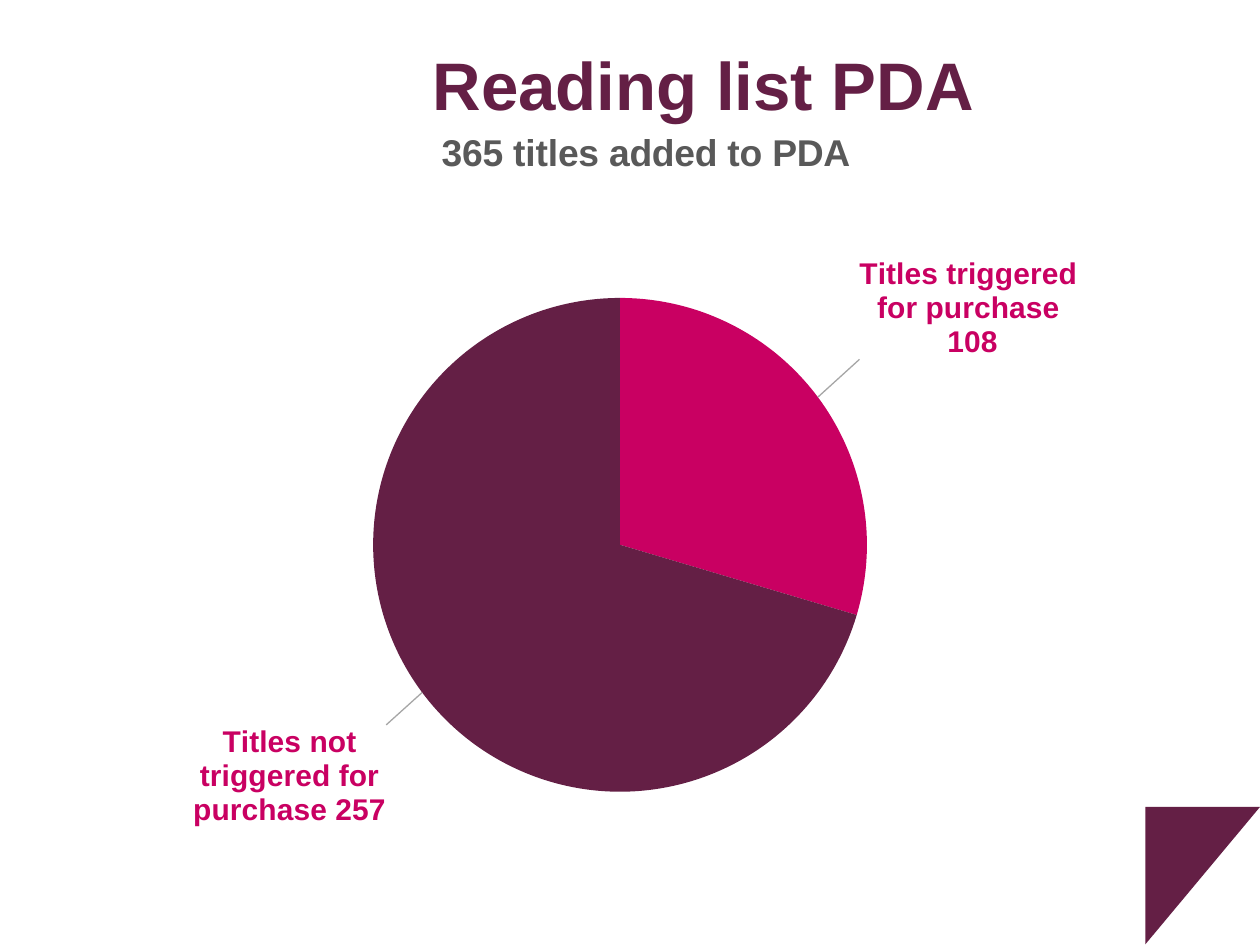
from lxml.etree import SubElement
from pptx import Presentation
from pptx.chart.data import CategoryChartData
from pptx.dml.color import RGBColor
from pptx.enum.chart import XL_CHART_TYPE as ChartType, XL_LABEL_POSITION as LabelPosition
from pptx.enum.shapes import MSO_SHAPE as Shape
from pptx.enum.text import MSO_ANCHOR as Anchor, PP_ALIGN as Align
from pptx.oxml import parse_xml
from pptx.oxml.ns import nsdecls, qn
from pptx.util import Pt

PLUM = RGBColor(0x64, 0x1F, 0x45)
PINK = RGBColor(0xC9, 0x00, 0x62)
GREY = RGBColor(0x59, 0x59, 0x59)
LEADER = RGBColor(0xA6, 0xA6, 0xA6)
FONT = "Arial"

# Content
TITLE = "Reading list PDA"
CHART_TITLE = "365 titles added to PDA"
# category, value, colour, label text (None: category and value), label offset
SLICES = [
    ("Titles triggered for purchase\n", 108, PINK, None, (20.4, -19.1)),
    ("Titles not triggered for purchase\n", 257, PLUM,
     "Titles not triggered for purchase 257", (-17.2, 16)),
]

# Places in points: left, top, width, height
TITLE_BOX = (240, 17.3, 330.5, 60.5)
CHART_BOX = (31, 64, 639.4, 427)
CORNER_BOX = (648, 467.6, 78.5, 65.5)
PIE_CENTRE, PIE_RADIUS = (354.3, 311.4), 141.1
HEADING_CORNER = (248.6, 70)
LABEL_SIZE = (115, 78)
LABEL_EXTENSION = "{CE6537A1-D6FC-4f65-9D91-7224C49458BB}"
C15 = "http://schemas.microsoft.com/office/drawing/2012/chart"


def format_font(font, size, colour):
    for name, value in {"name": FONT, "size": Pt(size), "bold": True}.items():
        setattr(font, name, value)
    font.color.rgb = colour


def fractions(x, y):
    """Lengths in points as fractions of the chart area."""
    return round(x / CHART_BOX[2], 4), round(y / CHART_BOX[3], 4)


def manual_layout(**values):
    layout = parse_xml(f"<c:layout {nsdecls('c')}><c:manualLayout/></c:layout>")
    for name, value in values.items():
        SubElement(layout[0], qn(f"c:{name}")).set("val", str(value))
    return layout


def label_size_extension():
    width, height = fractions(*LABEL_SIZE)
    return parse_xml(
        f"<c:extLst {nsdecls('c')}><c:ext uri='{LABEL_EXTENSION}' xmlns:c15='{C15}'>"
        f"<c15:layout><c:manualLayout><c:w val='{width}'/><c:h val='{height}'/>"
        "</c:manualLayout></c15:layout></c:ext></c:extLst>")


presentation = Presentation()
presentation.slide_width, presentation.slide_height = Pt(720), Pt(540)
slide = presentation.slides.add_slide(presentation.slide_layouts[5])

# Corner triangle
corner = slide.shapes.add_shape(Shape.RIGHT_TRIANGLE, *map(Pt, CORNER_BOX))
corner.rotation = 90
corner.shadow.inherit = False
corner.fill.solid()
corner.fill.fore_color.rgb = PLUM
corner.line.fill.background()

# Title
title = slide.shapes.title
for name, value in zip(("left", "top", "width", "height"), TITLE_BOX):
    setattr(title, name, Pt(value))
title.text_frame.text = TITLE
title.text_frame.vertical_anchor = Anchor.MIDDLE
title.text_frame.paragraphs[0].alignment = Align.LEFT
format_font(title.text_frame.paragraphs[0].runs[0].font, 38.4, PLUM)

# Pie chart
data = CategoryChartData()
data.categories = [item[0] for item in SLICES]
data.add_series(CHART_TITLE, [item[1] for item in SLICES])
chart = slide.shapes.add_chart(ChartType.PIE, *map(Pt, CHART_BOX), data).chart
chart.has_legend = False
chart.font.name, chart.font.size = FONT, Pt(10)
chart_left, chart_top = CHART_BOX[:2]

# Chart title
chart.has_title = True
heading = chart.chart_title
heading.include_in_layout = False
heading.text_frame.text = CHART_TITLE
format_font(heading.text_frame.paragraphs[0].runs[0].font, 21.3, GREY)
heading_xml = heading._element
for old in heading_xml.findall(qn("c:layout")):
    heading_xml.remove(old)
x, y = fractions(HEADING_CORNER[0] - chart_left, HEADING_CORNER[1] - chart_top)
heading_xml.find(qn("c:tx")).addnext(
    manual_layout(xMode="edge", yMode="edge", x=x, y=y))

# Pie position inside the chart
plot_area = chart._chartSpace.chart.plotArea
for old in plot_area.findall(qn("c:layout")):
    plot_area.remove(old)
x, y = fractions(PIE_CENTRE[0] - PIE_RADIUS - chart_left,
                 PIE_CENTRE[1] - PIE_RADIUS - chart_top)
w, h = fractions(2 * PIE_RADIUS, 2 * PIE_RADIUS)
plot_area.insert(0, manual_layout(
    layoutTarget="inner", xMode="edge", yMode="edge", x=x, y=y, w=w, h=h))

# Slices and their labels
series = chart.plots[0].series[0]
labels = series.data_labels
labels.show_value = labels.show_category_name = labels.show_percentage = True
labels.position = LabelPosition.OUTSIDE_END
format_font(labels.font, 17.1, PINK)
for index, (_, _, colour, text, offset) in enumerate(SLICES):
    point = series.points[index]
    point.format.fill.solid()
    point.format.fill.fore_color.rgb = colour
    point.format.line.fill.background()
    label = point.data_label
    if text:
        label.text_frame.text = text
        format_font(label.text_frame.paragraphs[0].runs[0].font, 17.1, PINK)
    else:
        format_font(label.font, 17.1, PINK)
    label.position = LabelPosition.OUTSIDE_END
    label_xml = series._element.xpath(f"c:dLbls/c:dLbl[c:idx/@val='{index}']")[0]
    x, y = fractions(*offset)
    label_xml.find(qn("c:idx")).addnext(manual_layout(x=x, y=y))
    label_xml.find(qn("c:showCatName")).set("val", "1")
    SubElement(label_xml, qn("c:separator")).text = " "
    label_xml.append(label_size_extension())

# Leader lines
labels_xml = series._element.find(qn("c:dLbls"))
leader_switch = labels_xml.find(qn("c:showLeaderLines"))
if leader_switch is None:
    leader_switch = SubElement(labels_xml, qn("c:showLeaderLines"))
leader_switch.set("val", "1")
leader_switch.addnext(parse_xml(
    f"<c:leaderLines {nsdecls('c', 'a')}><c:spPr><a:ln w='9525'><a:solidFill>"
    f"<a:srgbClr val='{LEADER}'/></a:solidFill></a:ln></c:spPr></c:leaderLines>"))

presentation.save("out.pptx")
